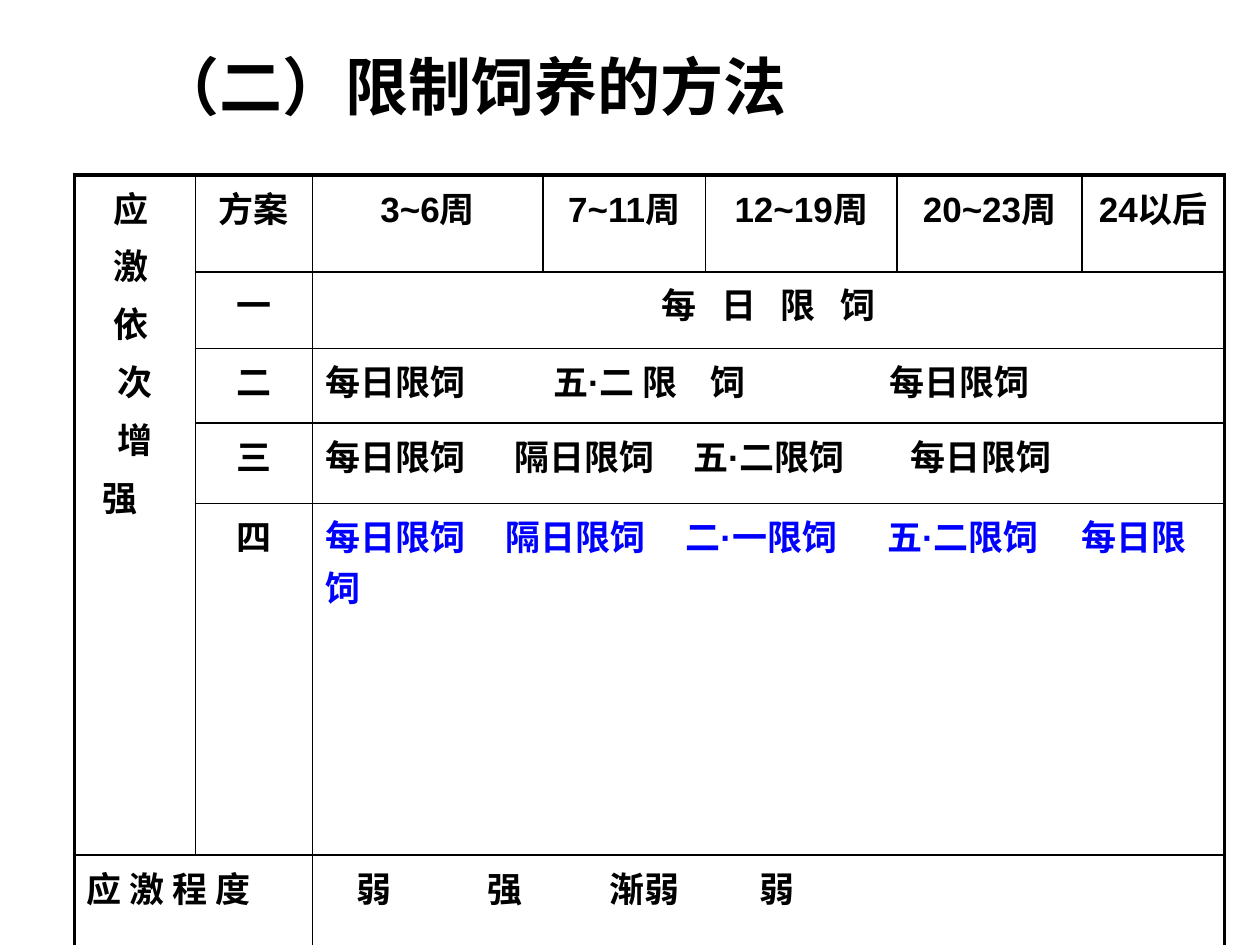
from lxml.etree import SubElement
from pptx import Presentation
from pptx.dml.color import RGBColor
from pptx.enum.text import MSO_ANCHOR, PP_ALIGN
from pptx.oxml.ns import qn
from pptx.util import Inches, Pt

BLACK = RGBColor(0, 0, 0)
BLUE = RGBColor(0, 0, 0xFF)

TITLE = "（二）限制饲养的方法"
STRESS_ORDER = ["应 ", "激 ", "依 ", "次", "增", "强"]
HEADERS = ["方案", "3~6周", "7~11周", "12~19周", "20~23周", "24以后"]
PLANS = ["一", "二", "三", "四"]
DAILY = "每 日 限 饲"
STRESS_LABEL = "应 激 程 度"
SCHEDULES = [
    (2, "每日限饲\t五·二 限\t饲\t每日限饲", [1.81, 3.06, 4.48], BLACK),
    (3, "每日限饲\t隔日限饲\t五·二限饲\t每日限饲", [1.5, 2.92, 4.65], BLACK),
    (4, "每日限饲\t隔日限饲\t二·一限饲\t五·二限饲\t每日限饲",
     [1.43, 2.86, 4.46, 6], BLUE),
    (5, "\t弱\t强\t渐弱\t弱", [0.25, 1.29, 2.26, 3.45], BLACK),
]
COLUMN_WIDTHS = [0.96, 0.93, 1.83, 1.29, 1.52, 1.47, 1.13]
ROW_HEIGHTS = [0.64, 0.61, 0.59, 0.64, 2.79, 0.9]
MERGES = [((0, 0), (4, 0)), ((5, 0), (5, 1))] + [((r, 2), (r, 6)) for r in range(1, 6)]
INNER, OUTER = 1, 2.25


def write(paragraph, text, size=20, color=BLACK, align=PP_ALIGN.LEFT, tabs=()):
    paragraph.alignment = align
    if tabs:
        tab_list = SubElement(paragraph._p.get_or_add_pPr(), qn("a:tabLst"))
        for stop in tabs:
            SubElement(tab_list, qn("a:tab"), pos=str(Inches(stop)), algn="l")
    run = paragraph.add_run()
    run.text = text
    for name, value in {"name": "Arial", "size": Pt(size), "bold": True}.items():
        setattr(run.font, name, value)
    run.font.color.rgb = color
    return run


def draw_borders(cell, row, column):
    across = cell.span_width if cell.is_merge_origin else 1
    down = cell.span_height if cell.is_merge_origin else 1
    sides = {
        "L": column == 0,
        "R": column + across == len(COLUMN_WIDTHS),
        "T": row == 0,
        "B": row + down == len(ROW_HEIGHTS),
    }
    properties = cell._tc.get_or_add_tcPr()
    for side, is_outer in sides.items():
        width = Pt(OUTER if is_outer else INNER)
        line = SubElement(properties, qn(f"a:ln{side}"), w=str(width))
        fill = SubElement(line, qn("a:solidFill"))
        SubElement(fill, qn("a:srgbClr"), val=str(BLACK))


prs = Presentation()
prs.slide_width, prs.slide_height = Inches(10), Inches(7.5)
slide = prs.slides.add_slide(prs.slide_layouts[6])

title = slide.shapes.add_textbox(
    Inches(1.14), Inches(0.28), Inches(6.22), Inches(0.79)).text_frame
title.word_wrap = True
title.vertical_anchor = MSO_ANCHOR.MIDDLE
write(title.paragraphs[0], TITLE, size=36)

table = slide.shapes.add_table(
    len(ROW_HEIGHTS), len(COLUMN_WIDTHS), Inches(0.59), Inches(1.39),
    Inches(sum(COLUMN_WIDTHS)), Inches(sum(ROW_HEIGHTS))).table
table.first_row = table.horz_banding = False
for column, width in zip(table.columns, COLUMN_WIDTHS):
    column.width = Inches(width)
for row, height in zip(table.rows, ROW_HEIGHTS):
    row.height = Inches(height)
for start, end in MERGES:
    table.cell(*start).merge(table.cell(*end))
for r in range(len(ROW_HEIGHTS)):
    for c in range(len(COLUMN_WIDTHS)):
        draw_borders(table.cell(r, c), r, c)
        table.cell(r, c).fill.background()


def first_paragraph(row, column):
    return table.cell(row, column).text_frame.paragraphs[0]


stress_frame = table.cell(0, 0).text_frame
for i, character in enumerate(STRESS_ORDER):
    paragraph = stress_frame.add_paragraph() if i else stress_frame.paragraphs[0]
    if i:
        paragraph.space_before = Pt(4)
    is_last = i == len(STRESS_ORDER) - 1
    write(paragraph, character, align=PP_ALIGN.LEFT if is_last else PP_ALIGN.CENTER)
    if is_last:
        paragraph._p.get_or_add_pPr().set("marL", str(Inches(0.12)))

for c, header in enumerate(HEADERS, start=1):
    write(first_paragraph(0, c), header, align=PP_ALIGN.CENTER)
for r, plan in enumerate(PLANS, start=1):
    write(first_paragraph(r, 1), plan, align=PP_ALIGN.CENTER)
daily = write(first_paragraph(1, 2), DAILY, align=PP_ALIGN.CENTER)
daily._r.get_or_add_rPr().set("spc", "480")
for r, schedule, stops, color in SCHEDULES:
    write(first_paragraph(r, 2), schedule, color=color, tabs=stops)
write(first_paragraph(5, 0), STRESS_LABEL)

prs.save("out.pptx")
